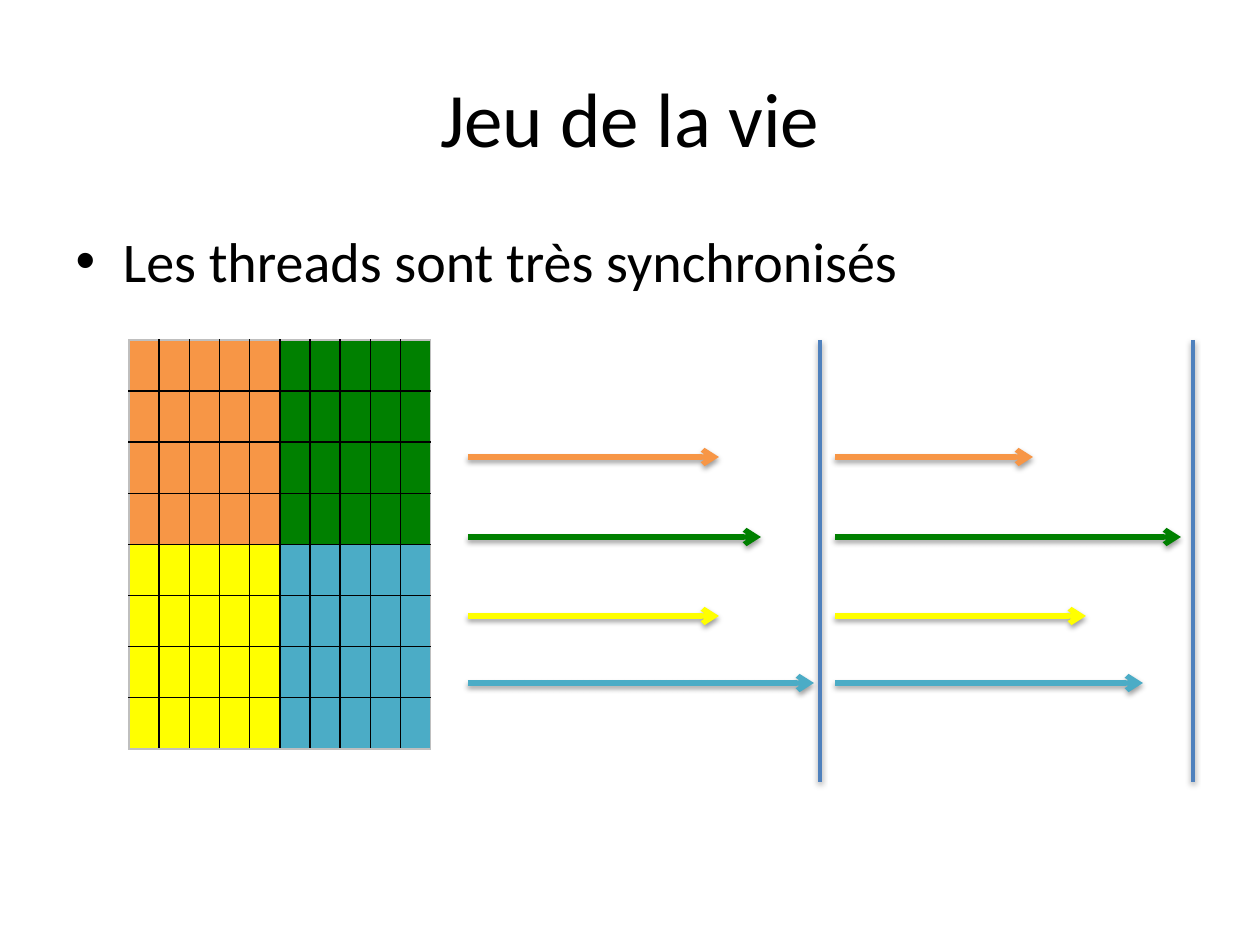
from pptx import Presentation
from pptx.dml.color import RGBColor
from pptx.enum.shapes import MSO_CONNECTOR as Conn
from pptx.enum.text import PP_ALIGN as Align, MSO_ANCHOR as Anchor
from pptx.oxml import parse_xml
from pptx.oxml.ns import nsdecls
from pptx.util import Emu, Pt

PX = 914400 // 126
NS = nsdecls("a")
ORANGE, GREEN, YELLOW, TEAL = "F79646", "008000", "FFFF00", "4BACC6"
BLUE, BLACK, GREY = "4F81BD", "000000", "BFBFBF"


def color(code):
    return RGBColor.from_string(code)


def draw(x1, y1, x2, y2, code, width, arrow=False):
    """Add a straight line with a soft shadow below it."""
    line = slide.shapes.add_connector(
        Conn.STRAIGHT, *(Emu(v * PX) for v in (x1, y1, x2, y2)))
    line.line.color.rgb = color(code)
    line.line.width = Pt(width)
    if arrow:
        line.line._get_or_add_ln().append(
            parse_xml(f'<a:tailEnd {NS} type="arrow"/>'))
    line._element.spPr.append(parse_xml(
        f'<a:effectLst {NS}><a:outerShdw blurRad="40000" dist="20000" '
        f'dir="5400000" rotWithShape="0"><a:srgbClr val="{BLACK}">'
        '<a:alpha val="38000"/></a:srgbClr></a:outerShdw></a:effectLst>'))


deck = Presentation()
deck.slide_width, deck.slide_height = Emu(9144000), Emu(6858000)
slide = deck.slides.add_slide(deck.slide_layouts[1])

# Title and list
title, body = slide.placeholders
for box, words, size, place in (
        (title, "Jeu de la vie", 44, (63, 38, 1134, 158)),
        (body, "Les threads sont très synchronisés", 32, (63, 220, 1134, 624))):
    box.left, box.top, box.width, box.height = (Emu(v * PX) for v in place)
    run = box.text_frame.paragraphs[0].add_run()
    run.text = words
    run.font.size = Pt(size)
    run.font.name = "Calibri"
    run.font.color.rgb = color(BLACK)
title.text_frame.vertical_anchor = Anchor.MIDDLE
title.text_frame.paragraphs[0].alignment = Align.CENTER

# Grid of cells, one quarter for each thread
ROWS, COLS = 8, 10
zones = ((ORANGE, GREEN), (YELLOW, TEAL))
grid = slide.shapes.add_table(
    ROWS, COLS, *(Emu(v * PX) for v in (129, 340, 287, 403))).table
grid.first_row = grid.horz_banding = False
for r in range(ROWS):
    for c in range(COLS):
        cell = grid.cell(r, c)
        cell.fill.solid()
        cell.fill.fore_color.rgb = color(zones[r * 2 // ROWS][c * 2 // COLS])
        edges = (("lnL", c == 0), ("lnR", c == COLS - 1),
                 ("lnT", r == 0), ("lnB", r == ROWS - 1))
        for i, (tag, outer) in enumerate(edges):
            code = GREY if outer else BLACK
            cell._tc.get_or_add_tcPr().insert(i, parse_xml(
                f'<a:{tag} {NS} w="12700"><a:solidFill>'
                f'<a:srgbClr val="{code}"/></a:solidFill></a:{tag}>'))

# Thread runs: colour, height, end of first step, end of second step
threads = ((TEAL, 683, 814, 1143), (YELLOW, 616, 719, 1086),
           (GREEN, 537, 761, 1181), (ORANGE, 457, 719, 1033))
for step, start in enumerate((468, 835)):
    for code, y, *ends in threads:
        draw(start, y, ends[step], y, code, 3, arrow=True)

# Barriers where the threads wait for each other
for x in (820, 1193):
    draw(x, 340, x, 782, BLUE, 2)

deck.save("out.pptx")
